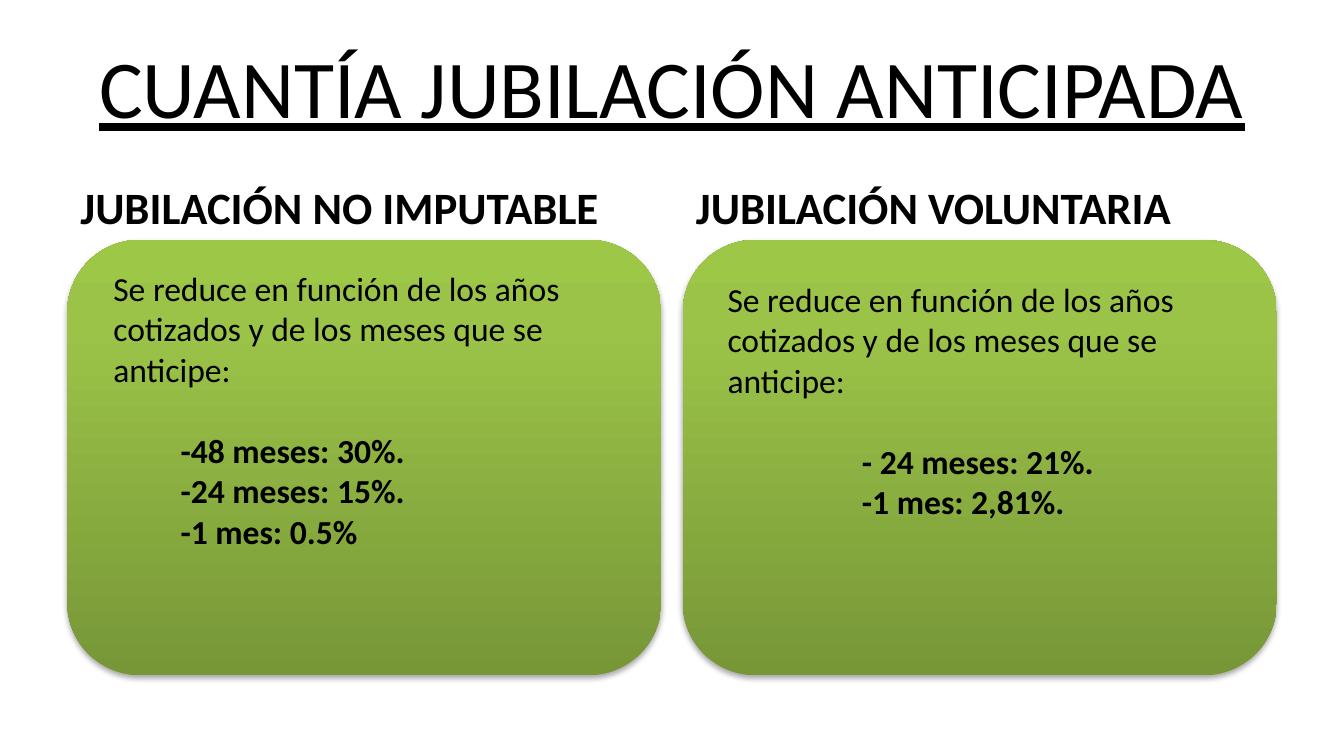
from copy import deepcopy

from lxml import etree
from pptx import Presentation
from pptx import util as u
from pptx.dml.color import RGBColor
from pptx.enum import shapes, text
from pptx.oxml import ns

PX = 4572
SLIDE_SIZE = (2000, 1125)
COLORS = {"ink": "000000", "dark": "779737", "mid": "9BC348", "light": "9DC746"}
GRADIENT = [(0, "dark"), (0.8, "mid"), (1, "light")]
SHADOW = {"blurRad": 40000, "dist": 23000, "dir": 5400000, "rotWithShape": 0}
SHADOW_ALPHA = 35000

TITLE = "CUANTÍA JUBILACIÓN ANTICIPADA"
INTRO = "Se reduce en función de los años cotizados y de los meses que se anticipe:"
COLUMNS = [
    {"heading": "JUBILACIÓN NO IMPUTABLE",
     "items": ["-48 meses: 30%.", "-24 meses: 15%.", "-1 mes: 0.5%"],
     "box": (149, 389, 804, 748), "indent": 100},
    {"heading": "JUBILACIÓN VOLUNTARIA",
     "items": ["- 24 meses: 21%.", "-1 mes: 2,81%."],
     "box": (1063, 405, 804, 384), "indent": 200},
]
TITLE_BOX = (100, 45, 1800, 188)
MARGIN, COLUMN_WIDTH, COLUMN_STEP = 100, 884, 916
HEADING_TOP, HEADING_HEIGHT = 252, 105
CARD_TOP, CARD_HEIGHT = HEADING_TOP + HEADING_HEIGHT, 648

TITLE_FONT = {"size": u.Pt(44), "underline": True}
HEADING_FONT = {"size": u.Pt(24), "bold": True}
INTRO_FONT = {"size": u.Pt(18)}
ITEM_FONT = {"size": u.Pt(18), "bold": True}


def px(*lengths):
    return [length * PX for length in lengths]


def rgb(name):
    return RGBColor.from_string(COLORS[name])


def add_text(slide, box, anchor, paragraphs):
    frame = slide.shapes.add_textbox(*px(*box)).text_frame
    frame.word_wrap = True
    frame.vertical_anchor = anchor
    for index, (content, font, layout, indent) in enumerate(paragraphs):
        paragraph = frame.add_paragraph() if index else frame.paragraphs[0]
        paragraph.text = content
        for name, value in layout.items():
            setattr(paragraph, name, value)
        if indent:
            paragraph._p.get_or_add_pPr().set("marL", str(indent * PX))
        run_font = paragraph.runs[0].font
        for name, value in {"name": "Calibri", **font}.items():
            setattr(run_font, name, value)
        run_font.color.rgb = rgb("ink")
    return frame


def add_card(slide, box):
    card = slide.shapes.add_shape(shapes.MSO_SHAPE.ROUNDED_RECTANGLE, *px(*box))
    card.line.fill.background()
    card.fill.gradient()
    card.fill.gradient_angle = 90
    properties = card._element.spPr
    stop_list = properties.find(".//" + ns.qn("a:gsLst"))
    stop_list.append(deepcopy(stop_list[-1]))
    for stop, (position, color) in zip(card.fill.gradient_stops, GRADIENT):
        stop.position = position
        stop.color.rgb = rgb(color)
    card.shadow.inherit = False
    effects = properties.find(ns.qn("a:effectLst"))
    shadow = etree.SubElement(effects, ns.qn("a:outerShdw"),
                              {name: str(value) for name, value in SHADOW.items()})
    color = etree.SubElement(shadow, ns.qn("a:srgbClr"), val=COLORS["ink"])
    etree.SubElement(color, ns.qn("a:alpha"), val=str(SHADOW_ALPHA))


def main():
    presentation = Presentation()
    presentation.slide_width, presentation.slide_height = px(*SLIDE_SIZE)
    slide = presentation.slides.add_slide(presentation.slide_layouts[6])
    anchors = text.MSO_ANCHOR

    add_text(slide, TITLE_BOX, anchors.TOP,
             [(TITLE, TITLE_FONT, {"alignment": text.PP_ALIGN.CENTER}, 0)])
    for index, column in enumerate(COLUMNS):
        left = MARGIN + index * COLUMN_STEP
        add_text(slide, (left, HEADING_TOP, COLUMN_WIDTH, HEADING_HEIGHT),
                 anchors.BOTTOM, [(column["heading"], HEADING_FONT, {}, 0)])
        add_card(slide, (left, CARD_TOP, COLUMN_WIDTH, CARD_HEIGHT))
        paragraphs = [(INTRO, INTRO_FONT, {}, 0)]
        for number, item in enumerate(column["items"]):
            gap = {"space_before": u.Pt(0 if number else 22)}
            paragraphs.append((item, ITEM_FONT, gap, column["indent"]))
        frame = add_text(slide, column["box"], anchors.TOP, paragraphs)
        frame.auto_size = text.MSO_AUTO_SIZE.SHAPE_TO_FIT_TEXT

    presentation.save("out.pptx")


if __name__ == "__main__":
    main()
